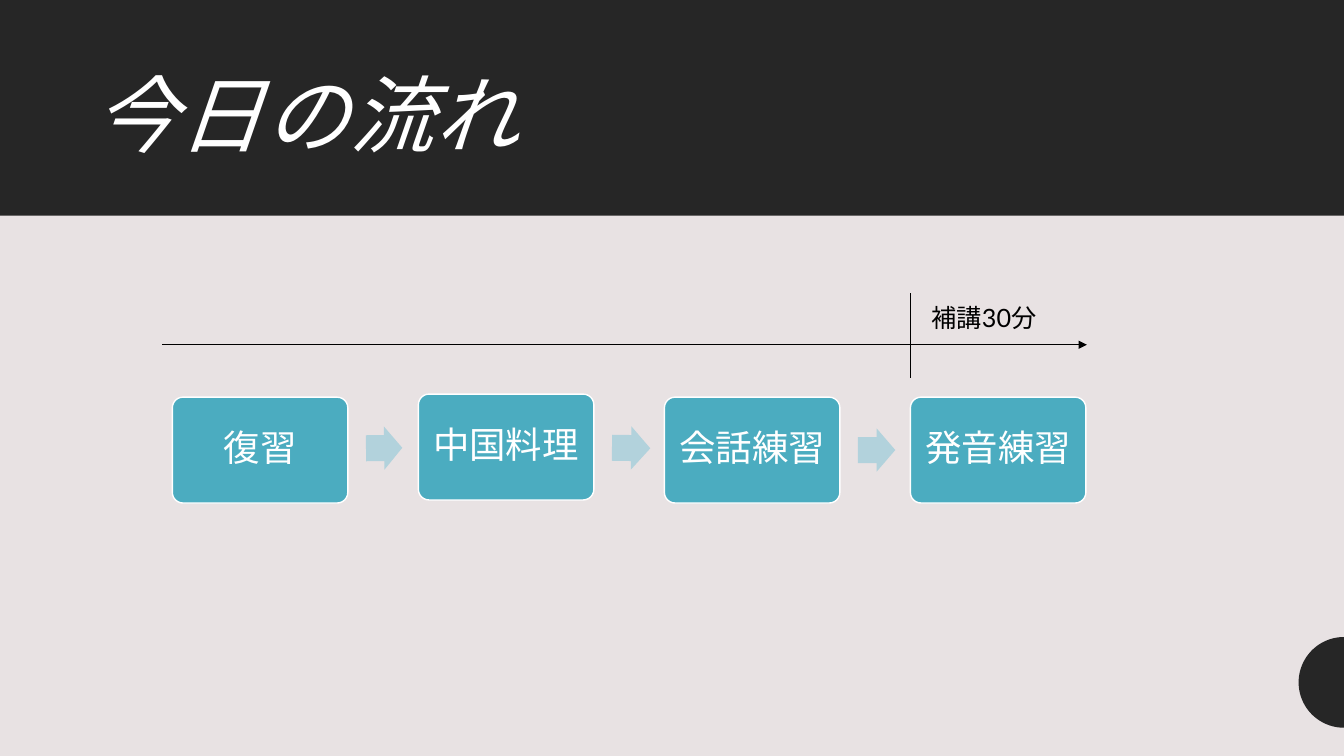
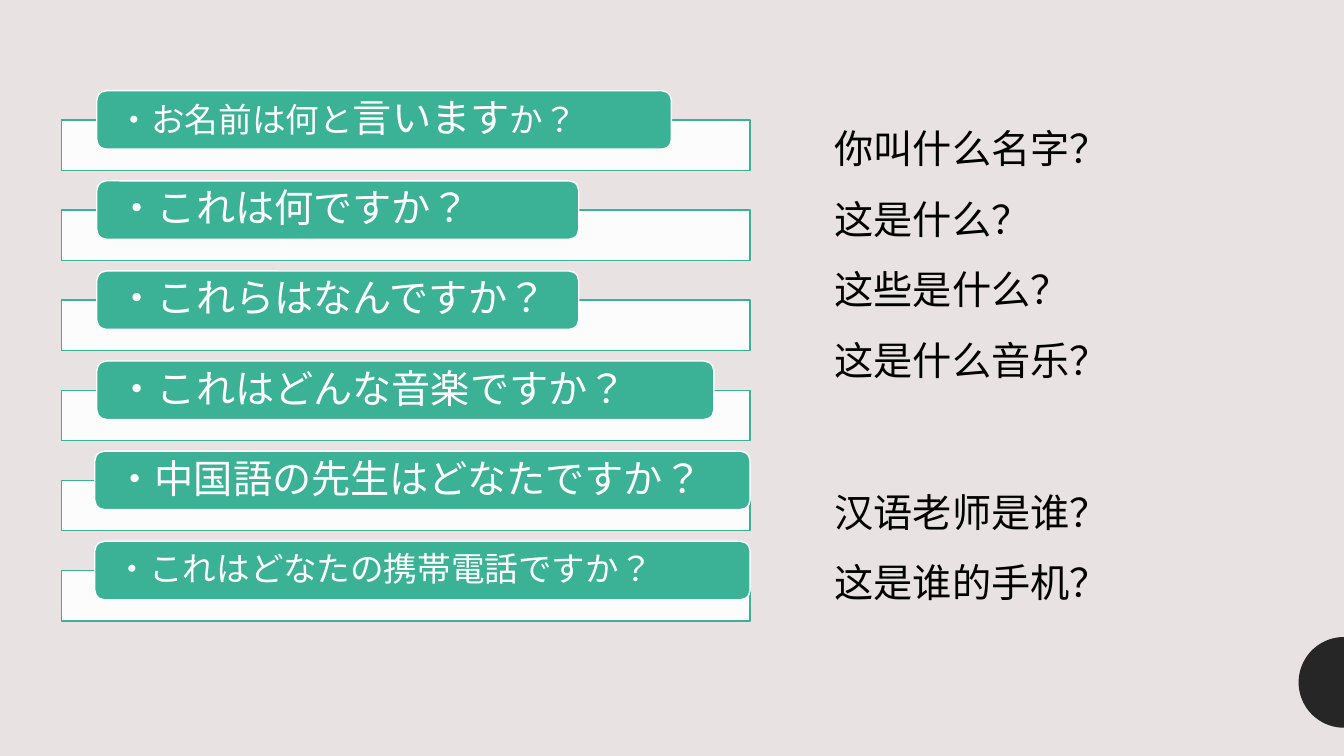
import math

from lxml import etree
from pptx import Presentation
from pptx import util as u
from pptx.dml import color
from pptx.enum import lang, shapes, text
from pptx.oxml import ns

COLOURS = {
    "paper": "E8E2E3",
    "dark": "262626",
    "white": "FFFFFF",
    "black": "000000",
    "card": "4BACC0",
    "arrow": "B2D2DC",
    "green": "3BB195",
}
WIDTH, HEIGHT = 13.33, 7.5
BODY_FONT, TITLE_FONT = "Lato", "Roboto"
JAPANESE = lang.MSO_LANGUAGE_ID.JAPANESE
CHINESE = lang.MSO_LANGUAGE_ID.SIMPLIFIED_CHINESE

STEPS = [("復習", 3.94), ("中国料理", 3.91), ("会話練習", 3.94), ("発音練習", 3.94)]
STEP_ARROWS = [(4.23, 0.36, -0.8), (4.23, 0.38, 0.8), (4.25, 0.37, 0)]
QUESTIONS = [
    (0.96, 5.7, [("・お名前は何と", 24), ("言います", 28), ("か？", 24)]),
    (0.96, 4.78, [("・これは何ですか？", 28)]),
    (0.96, 4.78, [("・これらはなんですか？", 28)]),
    (0.96, 6.12, [("・これはどんな音楽ですか？", 28)]),
    (0.94, 6.5, [("・中国語の先生はどなたですか？", 28)]),
    (0.94, 6.5, [("・これはどなたの携帯電話ですか？", 24)]),
]
ANSWERS = [
    "你叫什么名字？", "这是什么？", "这些是什么？", "这是什么音乐？",
    "汉语老师是谁？", "这是谁的手机？",
]
ANSWERS_BEFORE_GAP = 4


def rgb(name):
    return color.RGBColor.from_string(COLOURS[name])


def inches(*lengths):
    return [u.Inches(length) for length in lengths]


def paint(shape, fill, line=None):
    shape.shadow.inherit = False
    shape.fill.solid()
    shape.fill.fore_color.rgb = rgb(fill)
    if line:
        shape.line.color.rgb = rgb(line)
        shape.line.width = u.Pt(1)
    else:
        shape.line.fill.background()


def add_block(page, kind, place, fill, line=None):
    block = page.shapes.add_shape(kind, *inches(*place))
    paint(block, fill, line)
    return block


def set_frame(shape, side=0.1, edge=0.05, anchor=text.MSO_ANCHOR.TOP):
    frame = shape.text_frame
    frame.word_wrap = True
    frame.vertical_anchor = anchor
    frame.margin_left = frame.margin_right = u.Inches(side)
    frame.margin_top = frame.margin_bottom = u.Inches(edge)
    return frame


def style_span(span, size, colour, font=BODY_FONT, language=JAPANESE):
    span.font.size = u.Pt(size)
    span.font.name = font
    span.font.color.rgb = rgb(colour)
    span.font.language_id = language
    east_asian = etree.SubElement(span.font._element, ns.qn("a:ea"))
    east_asian.set("typeface", font)


def write(para, pieces, colour, spacing=None, align=text.PP_ALIGN.LEFT,
          font=BODY_FONT, language=JAPANESE):
    para.alignment = align
    para.line_spacing = spacing
    for wording, size in pieces:
        span = para.add_run()
        span.text = wording
        style_span(span, size, colour, font, language)


def add_line(page, start, end, arrow=False):
    line = page.shapes.add_connector(
        shapes.MSO_CONNECTOR.STRAIGHT, *inches(*start, *end))
    line.line.color.rgb = rgb("black")
    line.line.width = u.Pt(0.5)
    etree.SubElement(line._element.spPr, ns.qn("a:effectLst"))
    if arrow:
        head = etree.SubElement(line.line._get_or_add_ln(), ns.qn("a:tailEnd"))
        head.set("type", "triangle")


def add_half_disc(page, middle=6.77, radius=0.45, steps=48):
    angles = [math.pi * (0.5 + step / steps) for step in range(steps + 1)]
    points = [inches(WIDTH + radius * math.cos(angle), middle + radius * math.sin(angle))
              for angle in angles]
    builder = page.shapes.build_freeform(*points[0])
    builder.add_line_segments(points[1:], close=True)
    paint(builder.convert_to_shape(), "dark")


def add_page(deck):
    page = deck.slides.add_slide(deck.slide_layouts[6])
    page.background.fill.solid()
    page.background.fill.fore_color.rgb = rgb("paper")
    add_half_disc(page)
    return page


def add_title(page, wording):
    add_block(page, shapes.MSO_SHAPE.RECTANGLE, (0, 0, WIDTH, 2.14), "dark")
    box = page.shapes.add_textbox(*inches(0.83, 0.46, 11.67, 1.45))
    para = set_frame(box, anchor=text.MSO_ANCHOR.MIDDLE).paragraphs[0]
    write(para, [(wording, 60)], "white", 0.9, font=TITLE_FONT)
    font = para.runs[0].font
    font.italic = True
    font._element.set("spc", "100")


def add_step(page, left, top, wording):
    card = add_block(page, shapes.MSO_SHAPE.ROUNDED_RECTANGLE,
                     (left, top, 1.74, 1.05), "card", "white")
    card.adjustments[0] = 0.1
    frame = set_frame(card, 0.1, 0.1, text.MSO_ANCHOR.MIDDLE)
    write(frame.paragraphs[0], [(wording, 26)], "white", 0.9, text.PP_ALIGN.CENTER)


def add_step_arrow(page, left, top, width, turn):
    arrow = add_block(page, shapes.MSO_SHAPE.RIGHT_ARROW, (left, top, width, 0.43), "arrow")
    arrow.adjustments[0] = 0.6
    arrow.adjustments[1] = 0.5
    arrow.rotation = turn


def add_question(page, top, left, width, pieces):
    band = add_block(page, shapes.MSO_SHAPE.RECTANGLE,
                     (0.61, top + 0.29, 6.83, 0.5), "white", "green")
    fill = band._element.spPr.find(ns.qn("a:solidFill"))
    etree.SubElement(fill[0], ns.qn("a:alpha")).set("val", "90000")
    pill = add_block(page, shapes.MSO_SHAPE.ROUNDED_RECTANGLE,
                     (left, top, width, 0.58), "green", "white")
    frame = set_frame(pill, 0.18, 0, text.MSO_ANCHOR.MIDDLE)
    write(frame.paragraphs[0], pieces, "white", 0.9)


def add_answers(page):
    box = page.shapes.add_textbox(*inches(8.18, 0.95, 3.92, 5.07))
    frame = set_frame(box)
    for index, answer in enumerate(ANSWERS):
        para = frame.add_paragraph() if index else frame.paragraphs[0]
        write(para, [(answer, 28)], "black", 1.5, language=CHINESE)
        if index == ANSWERS_BEFORE_GAP:
            para.space_before = u.Pt(58)


def build_flow(deck):
    page = add_page(deck)
    add_title(page, "今日の流れ")
    first, pitch = 1.71, 2.44
    for index, (wording, top) in enumerate(STEPS):
        add_step(page, first + index * pitch, top, wording)
    for index, (top, width, turn) in enumerate(STEP_ARROWS):
        add_step_arrow(page, first + 1.92 + index * pitch, top, width, turn)
    add_line(page, (1.61, 3.42), (10.78, 3.42), arrow=True)
    add_line(page, (9.03, 2.91), (9.03, 3.75))
    label = page.shapes.add_textbox(*inches(9.14, 2.95, 1.65, 0.4))
    write(set_frame(label).paragraphs[0], [("補講30分", 18)], "black")


def build_questions(deck):
    page = add_page(deck)
    first, last = 0.9, 5.37
    pitch = (last - first) / (len(QUESTIONS) - 1)
    for index, question in enumerate(QUESTIONS):
        add_question(page, first + index * pitch, *question)
    add_answers(page)


def main():
    deck = Presentation()
    deck.slide_width, deck.slide_height = inches(WIDTH, HEIGHT)
    build_flow(deck)
    build_questions(deck)
    deck.save("out.pptx")


if __name__ == "__main__":
    main()
